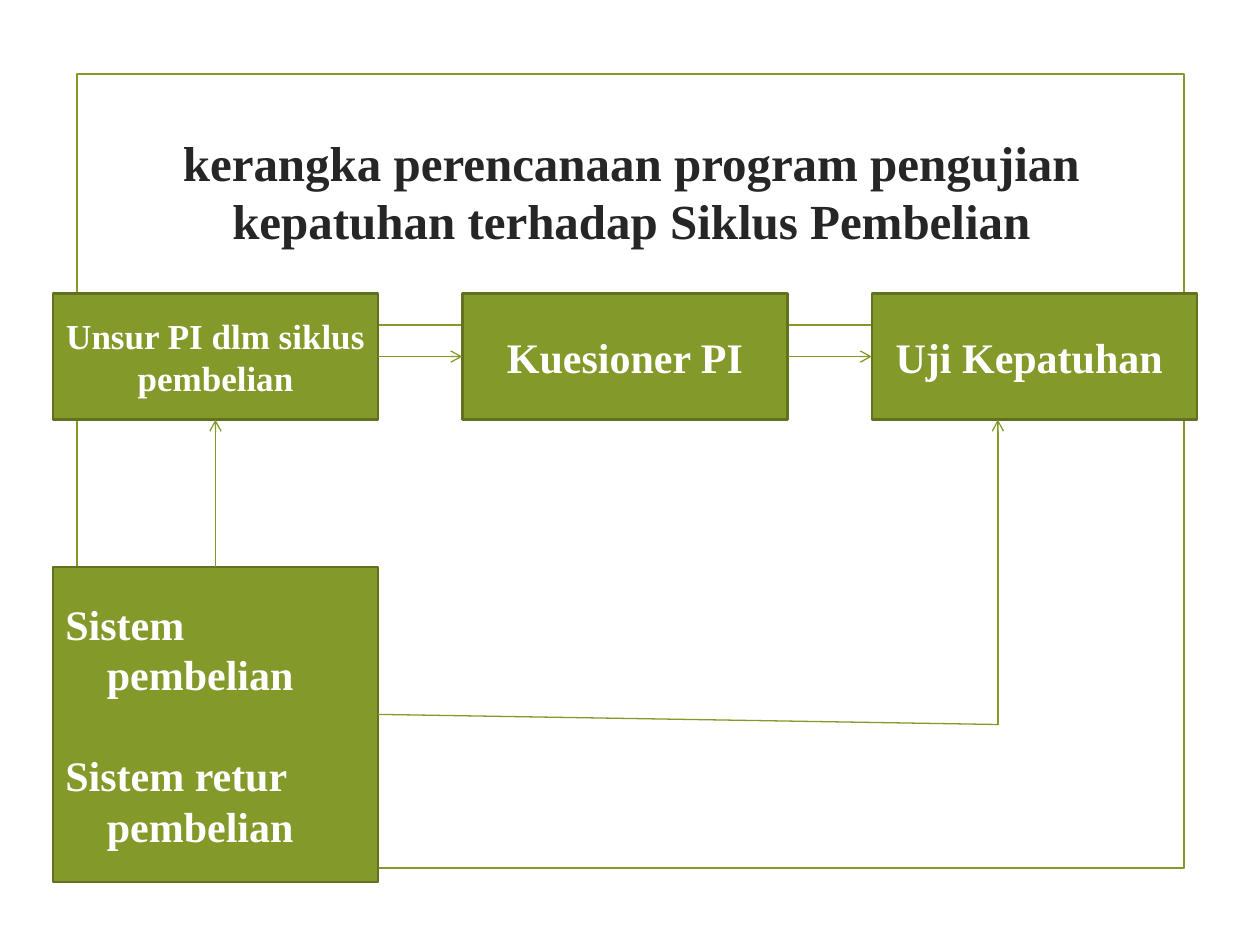
from dataclasses import dataclass
from typing import Optional

from lxml import etree
from pptx import Presentation
from pptx.dml.color import RGBColor
from pptx.enum.shapes import MSO_CONNECTOR, MSO_SHAPE
from pptx.enum.text import MSO_ANCHOR, PP_ALIGN
from pptx.oxml.ns import qn
from pptx.util import Inches, Pt

RECTANGLE = MSO_SHAPE.RECTANGLE
STRAIGHT = MSO_CONNECTOR.STRAIGHT
CENTER, LEFT = PP_ALIGN.CENTER, PP_ALIGN.LEFT
TOP, MIDDLE = MSO_ANCHOR.TOP, MSO_ANCHOR.MIDDLE
TOP_SIDE, LEFT_SIDE, BOTTOM_SIDE, RIGHT_SIDE = range(4)


@dataclass(frozen=True)
class Theme:
    font: str = "Times New Roman"
    green: RGBColor = RGBColor(0x83, 0x99, 0x2A)
    dark_green: RGBColor = RGBColor(0x61, 0x71, 0x1F)
    white: RGBColor = RGBColor(0xFF, 0xFF, 0xFF)
    ink: RGBColor = RGBColor(0x26, 0x26, 0x26)
    title_size: float = 28
    body_size: float = 24
    small_size: float = 20
    line_factor: float = 1.2
    border: float = 1.25
    arrow: float = 0.75


THEME = Theme()


@dataclass(frozen=True)
class Line:
    text: str
    indent: float = 0
    gap_before: float = 0


@dataclass(frozen=True)
class Box:
    left: float
    top: float
    height: float
    lines: tuple[Line, ...]
    size: float = THEME.body_size
    align: PP_ALIGN = CENTER


@dataclass(frozen=True)
class Link:
    start: tuple[float, float]
    end: tuple[float, float]
    arrow: bool = True
    width: float = THEME.arrow
    begin_box: Optional[tuple[int, int]] = None
    end_box: Optional[tuple[int, int]] = None


BOX_WIDTH = 2.58
BOX_STEP = 3.25
BOX_LEFT = 0.42
ROW_TOP, ROW_HEIGHT = 2.33, 1
ROW_MIDDLE = ROW_TOP + ROW_HEIGHT / 2
ROW_BOTTOM = ROW_TOP + ROW_HEIGHT
SYSTEM_TOP = 4.5
SYSTEM_INDEX = 3
INDENT = 0.33
TEST_ARROW_X = 7.92

ROW = (
    ("Unsur PI dlm siklus pembelian", THEME.small_size),
    ("Kuesioner PI", THEME.body_size),
    ("Uji Kepatuhan ", THEME.body_size),
)
BOXES = [
    Box(BOX_LEFT + index * BOX_STEP, ROW_TOP, ROW_HEIGHT, (Line(text),), size)
    for index, (text, size) in enumerate(ROW)
] + [
    Box(BOX_LEFT, SYSTEM_TOP, 2.5, (
        Line("Sistem"),
        Line("pembelian", INDENT),
        Line("Sistem retur", gap_before=THEME.body_size * THEME.line_factor),
        Line("pembelian", INDENT),
    ), align=LEFT),
]

BOX_CENTER = BOX_LEFT + BOX_WIDTH / 2
BOX_RIGHT = BOX_LEFT + BOX_WIDTH
LINKS = [
    Link((BOX_RIGHT + index * BOX_STEP, ROW_MIDDLE),
         (BOX_LEFT + (index + 1) * BOX_STEP, ROW_MIDDLE),
         begin_box=(index, RIGHT_SIDE), end_box=(index + 1, LEFT_SIDE))
    for index in range(2)
] + [
    Link((BOX_CENTER, SYSTEM_TOP), (BOX_CENTER, ROW_BOTTOM),
         begin_box=(SYSTEM_INDEX, TOP_SIDE), end_box=(0, BOTTOM_SIDE)),
    Link((BOX_RIGHT, 5.67), (TEST_ARROW_X, 5.75), arrow=False),
    Link((TEST_ARROW_X, 5.75), (TEST_ARROW_X, ROW_BOTTOM)),
]


def write_lines(frame, lines: tuple[Line, ...], size: float, color: RGBColor,
                align: PP_ALIGN, anchor: MSO_ANCHOR) -> None:
    frame.word_wrap = True
    frame.vertical_anchor = anchor
    for index, line in enumerate(lines):
        paragraph = frame.add_paragraph() if index else frame.paragraphs[0]
        paragraph.alignment = align
        paragraph.line_spacing = Pt(size * THEME.line_factor)
        if line.gap_before:
            paragraph.space_before = Pt(line.gap_before)
        if line.indent:
            paragraph._p.get_or_add_pPr().set("marL", str(Inches(line.indent)))
        run = paragraph.add_run()
        run.text = line.text
        run.font.name = THEME.font
        run.font.size = Pt(size)
        run.font.bold = True
        run.font.color.rgb = color


def add_rectangle(slide, left: float, top: float, width: float, height: float,
                  line_color: RGBColor, fill: Optional[RGBColor] = None):
    shape = slide.shapes.add_shape(
        RECTANGLE, Inches(left), Inches(top), Inches(width), Inches(height))
    shape.shadow.inherit = False
    if fill is None:
        shape.fill.background()
    else:
        shape.fill.solid()
        shape.fill.fore_color.rgb = fill
    shape.line.color.rgb = line_color
    shape.line.width = Pt(THEME.border)
    return shape


def add_box(slide, box: Box):
    shape = add_rectangle(slide, box.left, box.top, BOX_WIDTH, box.height,
                          THEME.dark_green, THEME.green)
    write_lines(shape.text_frame, box.lines, box.size, THEME.white, box.align, MIDDLE)
    return shape


def add_link(slide, link: Link, shapes: list) -> None:
    connector = slide.shapes.add_connector(
        STRAIGHT, *(Inches(value) for value in link.start + link.end))
    connector.line.color.rgb = THEME.green
    connector.line.width = Pt(link.width)
    if link.arrow:
        tail = etree.SubElement(connector.line._get_or_add_ln(), qn("a:tailEnd"))
        tail.set("type", "arrow")
    etree.SubElement(connector._element.spPr, qn("a:effectLst"))
    if link.begin_box:
        index, side = link.begin_box
        connector.begin_connect(shapes[index], side)
    if link.end_box:
        index, side = link.end_box
        connector.end_connect(shapes[index], side)


def add_title(slide, text: str) -> None:
    title = slide.shapes.add_textbox(Inches(1.29), Inches(1), Inches(7.44), Inches(1.43))
    write_lines(title.text_frame, (Line(text),), THEME.title_size, THEME.ink, CENTER, TOP)


def main() -> None:
    presentation = Presentation()
    presentation.slide_width = Inches(10)
    presentation.slide_height = Inches(7.5)
    slide = presentation.slides.add_slide(presentation.slide_layouts[6])

    add_rectangle(slide, 0.61, 0.59, 8.79, 6.3, THEME.green)
    add_link(slide, Link((1.4, 2.58), (8.61, 2.58), False, THEME.border), [])
    add_title(slide, "kerangka perencanaan program pengujian "
                     "kepatuhan terhadap Siklus Pembelian")
    shapes = [add_box(slide, box) for box in BOXES]
    for link in LINKS:
        add_link(slide, link, shapes)

    presentation.save("out.pptx")


if __name__ == "__main__":
    main()
